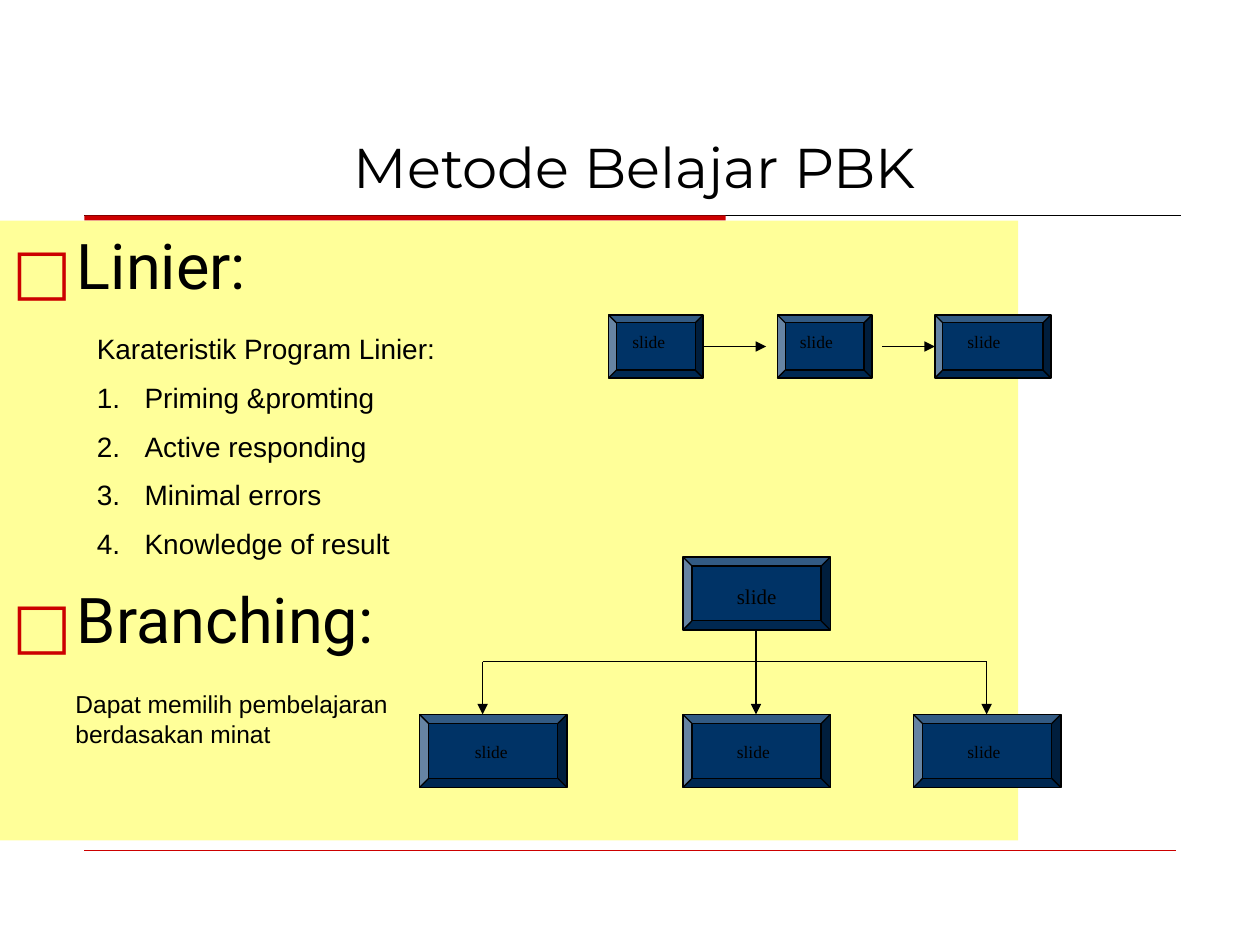
"""Build a slide on linear and branching learning programs."""
from lxml.etree import SubElement
from pptx import Presentation
from pptx.dml.color import RGBColor
from pptx.enum.shapes import MSO_CONNECTOR, MSO_SHAPE
from pptx.enum.text import MSO_ANCHOR, MSO_AUTO_SIZE, PP_ALIGN
from pptx.oxml.ns import qn
from pptx.util import Inches, Pt

HUES = {"ink": "000000", "red": "CC0000", "navy": "003366", "cream": "FFFF99"}


def tint(name):
    return RGBColor.from_string(HUES[name])


def place(shape, left, top, width, height):
    shape.left, shape.top = Inches(left), Inches(top)
    shape.width, shape.height = Inches(width), Inches(height)


def write(frame, lines, face, size, gap=0):
    frame.auto_size = MSO_AUTO_SIZE.NONE
    frame.vertical_anchor = MSO_ANCHOR.TOP
    frame.text = "\n".join(lines)
    for index, para in enumerate(frame.paragraphs):
        para.space_before = Pt(gap if index else 0)
        para.font.name, para.font.size = face, Pt(size)
        para.font.color.rgb = tint("ink")


def hang(para, indent):
    props = para._p.get_or_add_pPr()
    props.set("marL", str(Inches(indent)))
    props.set("indent", str(-Inches(indent)))
    return props


def mark(props, tag, **attrs):
    item = SubElement(props, qn(tag), **attrs)
    font = props.find(qn("a:defRPr"))
    if font is not None:
        font.addprevious(item)
    return item


def add_text(slide, lines, box, face, size, gap=0):
    shape = slide.shapes.add_textbox(*map(Inches, box))
    shape.text_frame.word_wrap = True
    write(shape.text_frame, lines, face, size, gap)
    return shape.text_frame.paragraphs


def add_line(slide, start, end, hue="ink", width=0.75, arrow=False):
    ends = map(Inches, (*start, *end))
    line = slide.shapes.add_connector(MSO_CONNECTOR.STRAIGHT, *ends)
    line.line.color.rgb = tint(hue)
    line.line.width = Pt(width)
    if arrow:
        SubElement(line.line._get_or_add_ln(), qn("a:tailEnd"), type="triangle")
    SubElement(line._element.spPr, qn("a:effectLst"))


def add_block(slide, kind, box, hue):
    shape = slide.shapes.add_shape(kind, *map(Inches, box))
    shape.shadow.inherit = False
    shape.fill.solid()
    shape.fill.fore_color.rgb = tint(hue)
    shape.line.fill.background()
    return shape


def add_card(slide, box, spot, size=10):
    card = add_block(slide, MSO_SHAPE.BEVEL, box, "navy")
    card.line.color.rgb = tint("ink")
    card.line.width = Pt(0.75)
    add_text(slide, ["slide"], (*spot, 0.67, 0.3), "Times New Roman", size)


def add_title(slide):
    title = slide.shapes.title
    place(title, 2, 1, 6.08, 0.62)
    write(title.text_frame, ["Metode Belajar PBK"], "Montserrat", 32)
    title.text_frame.word_wrap = False
    title.text_frame.paragraphs[0].alignment = PP_ALIGN.CENTER


def add_body(slide):
    body = slide.placeholders[1]
    place(body, 0, 1.75, 8.08, 4.92)
    body.fill.solid()
    body.fill.fore_color.rgb = tint("cream")
    write(body.text_frame, ["Linier:", "Branching:"], "Roboto", 36, 159)
    for para in body.text_frame.paragraphs:
        props = hang(para, 0.51)
        color = mark(props, "a:buClr")
        SubElement(color, qn("a:srgbClr"), val=HUES["red"])
        mark(props, "a:buFont", typeface="Noto Sans Symbols")
        mark(props, "a:buChar", char="□")


def add_notes(slide):
    traits = ["Karateristik Program Linier:", "Priming &promting",
              "Active responding", "Minimal errors", "Knowledge of result"]
    paras = add_text(slide, traits, (0.67, 2.58, 4, 1.97), "Arial", 16, 8.75)
    for index, para in enumerate(paras):
        props = hang(para, 0.38)
        if index:
            mark(props, "a:buFont", typeface="Arial")
            mark(props, "a:buAutoNum", type="arabicPeriod")
    add_text(slide, ["Dapat memilih pembelajaran", "berdasakan minat"],
             (0.5, 5.42, 2.75, 0.57), "Arial", 14)


def add_chain(slide):
    for left, width, text in ((4.83, 0.75, 4.92), (6.17, 0.75, 6.25),
                              (7.42, 0.92, 7.58)):
        add_card(slide, (left, 2.5, width, 0.5), (text, 2.58))
    for start, end in ((5.58, 6.08), (7, 7.42)):
        add_line(slide, (start, 2.75), (end, 2.75), arrow=True)


def add_tree(slide):
    add_card(slide, (5.42, 4.42, 1.17, 0.58), (5.75, 4.58), 12)
    add_line(slide, (3.83, 5.25), (7.83, 5.25))
    for left, text, stem, top in ((3.33, 3.67, 3.83, 5.25),
                                  (5.42, 5.75, 6, 5), (7.25, 7.58, 7.83, 5.25)):
        add_card(slide, (left, 5.67, 1.17, 0.58), (text, 5.83))
        add_line(slide, (stem, top), (stem, 5.67), arrow=True)


def main():
    deck = Presentation()
    deck.slide_width, deck.slide_height = Inches(10), Inches(7.5)
    slide = deck.slides.add_slide(deck.slide_layouts[1])
    add_title(slide)
    add_body(slide)
    add_line(slide, (0.67, 1.71), (9.37, 1.71))
    add_block(slide, MSO_SHAPE.RECTANGLE, (0.67, 1.71, 5.09, 0.04), "red")
    add_line(slide, (0.67, 6.75), (9.33, 6.75), "red", 0.25)
    add_notes(slide)
    add_chain(slide)
    add_tree(slide)
    deck.save("out.pptx")


if __name__ == "__main__":
    main()
